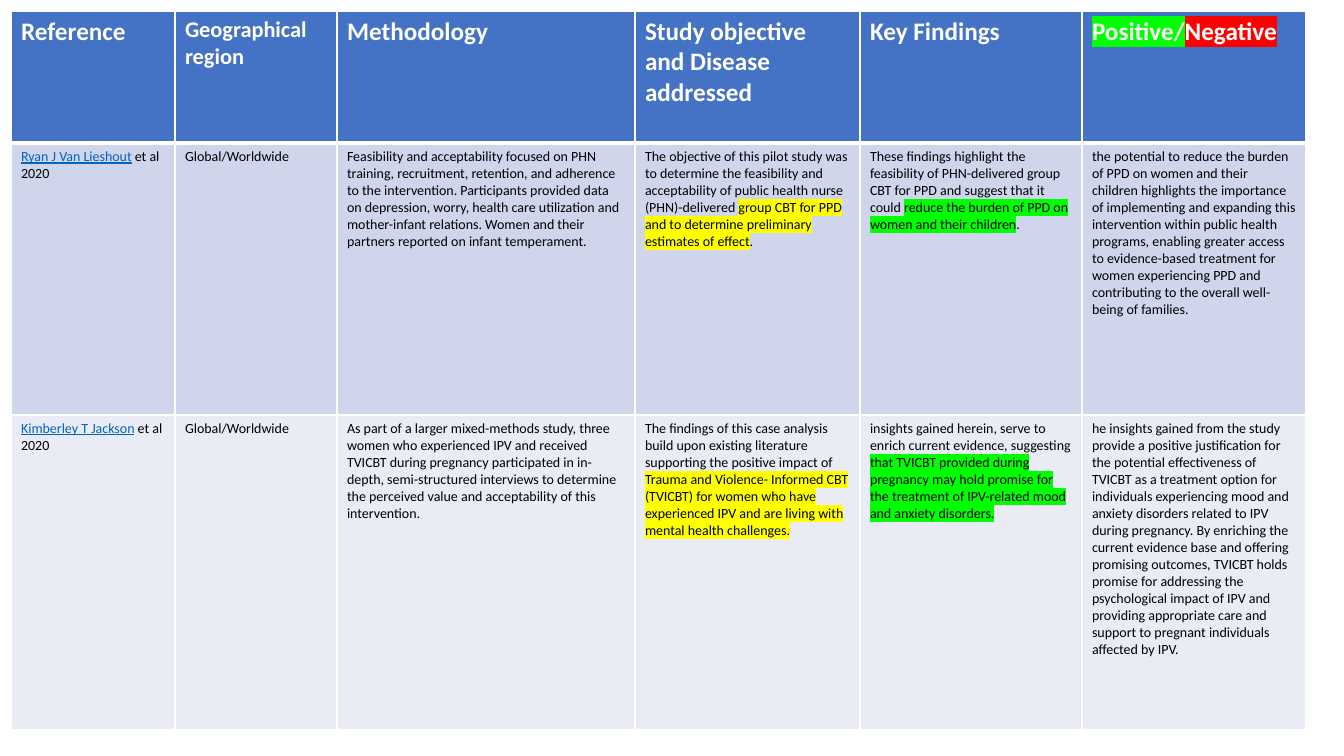
from lxml.etree import SubElement
from pptx import Presentation
from pptx.dml.color import RGBColor
from pptx.oxml import parse_xml
from pptx.oxml.ns import nsdecls, qn
from pptx.util import Pt

EMU_PER_PX = 914400 / 100.8
SLIDE_SIZE = (1344, 756)
TABLE_ORIGIN = (11, 11)
COLUMN_WIDTHS = (164, 162, 298, 225, 222, 224)
ROW_HEIGHTS = (132, 272, 315)
ROW_FILLS = ("4472C4", "CFD5EA", "E9EBF5")
FONT = "Calibri"
WHITE, BLACK, LINK_BLUE = "FFFFFF", "000000", "0563C1"
HEADER_SIZES = (18, 16, 18, 18, 18, 18)
BODY_SIZE = 10
THIN, THICK = 1, 3
HIGHLIGHTS = {"yellow": "FFFF00", "green": "00FF00", "red": "FF0000"}

STUDIES = [
    [
        [("Reference", "")],
        [("Geographical region", "")],
        [("Methodology", "")],
        [("Study objective and Disease addressed", "")],
        [("Key Findings", "")],
        [("Positive/", "green"), ("Negative", "red")],
    ],
    [
        [("Ryan J Van Lieshout", "link"), (" et al 2020", "")],
        [("Global/Worldwide", "")],
        [("Feasibility and acceptability focused on PHN training, recruitment, retention, and "
          "adherence to the intervention. Participants provided data on depression, worry, health "
          "care utilization and mother-infant relations. Women and their partners reported on "
          "infant temperament.", "")],
        [("The objective of this pilot study was to determine the feasibility and acceptability "
          "of public health nurse (PHN)-delivered ", ""),
         ("group CBT for PPD and to determine preliminary estimates of effect", "yellow"),
         (".", "")],
        [("These findings highlight the feasibility of PHN-delivered group CBT for PPD and "
          "suggest that it could ", ""),
         ("reduce the burden of PPD on women and their children", "green"),
         (".", "")],
        [("the potential to reduce the burden of PPD on women and their children highlights the "
          "importance of implementing and expanding this intervention within public health "
          "programs, enabling greater access to evidence-based treatment for women experiencing "
          "PPD and contributing to the overall well-being of families.", "")],
    ],
    [
        [("Kimberley T Jackson", "link"), (" et al 2020", "")],
        [("Global/Worldwide", "")],
        [("As part of a larger mixed-methods study, three women who experienced IPV and received "
          "TVICBT during pregnancy participated in in-depth, semi-structured interviews to "
          "determine the perceived value and acceptability of this intervention.", "")],
        [("The findings of this case analysis build upon existing literature supporting the "
          "positive impact of ", ""),
         ("Trauma and Violence- Informed CBT (TVICBT) for women who have experienced IPV and are "
          "living with mental health challenges.", "yellow")],
        [("insights gained herein, serve to enrich current evidence, suggesting ", ""),
         ("that TVICBT provided during pregnancy may hold promise for the treatment of "
          "IPV-related mood and anxiety disorders.", "green")],
        [("he insights gained from the study provide a positive justification for the potential "
          "effectiveness of TVICBT as a treatment option for individuals experiencing mood and "
          "anxiety disorders related to IPV during pregnancy. By enriching the current evidence "
          "base and offering promising outcomes, TVICBT holds promise for addressing the "
          "psychological impact of IPV and providing appropriate care and support to pregnant "
          "individuals affected by IPV.", "")],
    ],
]


def px(length):
    return round(length * EMU_PER_PX)


def rgb(color):
    return RGBColor.from_string(color)


def add_styled_run(paragraph, words, style, size, color, bold):
    run = paragraph.add_run()
    run.text = words
    run.font.size = Pt(size)
    run.font.bold = bold
    run.font.underline = style == "link"
    run.font.color.rgb = rgb(LINK_BLUE if style == "link" else color)
    run.font.name = FONT
    if style in HIGHLIGHTS:
        highlight = parse_xml(f"<a:highlight {nsdecls('a')}/>")
        SubElement(highlight, qn("a:srgbClr"), val=HIGHLIGHTS[style])
        run.font._element.find(qn("a:solidFill")).addnext(highlight)


def set_borders(cell, widths):
    properties = cell._tc.get_or_add_tcPr()
    for position, (side, width) in enumerate(widths.items()):
        properties.insert(position, parse_xml(
            f'<a:ln{side} {nsdecls("a")} w="{Pt(width)}"><a:solidFill>'
            f'<a:srgbClr val="{WHITE}"/></a:solidFill></a:ln{side}>'))


def main():
    deck = Presentation()
    deck.slide_width, deck.slide_height = map(px, SLIDE_SIZE)
    slide = deck.slides.add_slide(deck.slide_layouts[6])
    review = slide.shapes.add_table(
        len(ROW_HEIGHTS), len(COLUMN_WIDTHS), *map(px, TABLE_ORIGIN),
        px(sum(COLUMN_WIDTHS)), px(sum(ROW_HEIGHTS))).table
    review.horz_banding = False
    for column, width in zip(review.columns, COLUMN_WIDTHS):
        column.width = px(width)

    for r, study in enumerate(STUDIES):
        review.rows[r].height = px(ROW_HEIGHTS[r])
        is_header = r == 0
        for c, passages in enumerate(study):
            cell = review.cell(r, c)
            cell.fill.solid()
            cell.fill.fore_color.rgb = rgb(ROW_FILLS[r])
            set_borders(cell, {"L": THIN, "R": THIN, "T": THICK if r == 1 else THIN,
                               "B": THICK if is_header else THIN})
            size = HEADER_SIZES[c] if is_header else BODY_SIZE
            for words, style in passages:
                add_styled_run(cell.text_frame.paragraphs[0], words, style, size,
                               WHITE if is_header else BLACK, is_header)
    deck.save("out.pptx")


if __name__ == "__main__":
    main()
